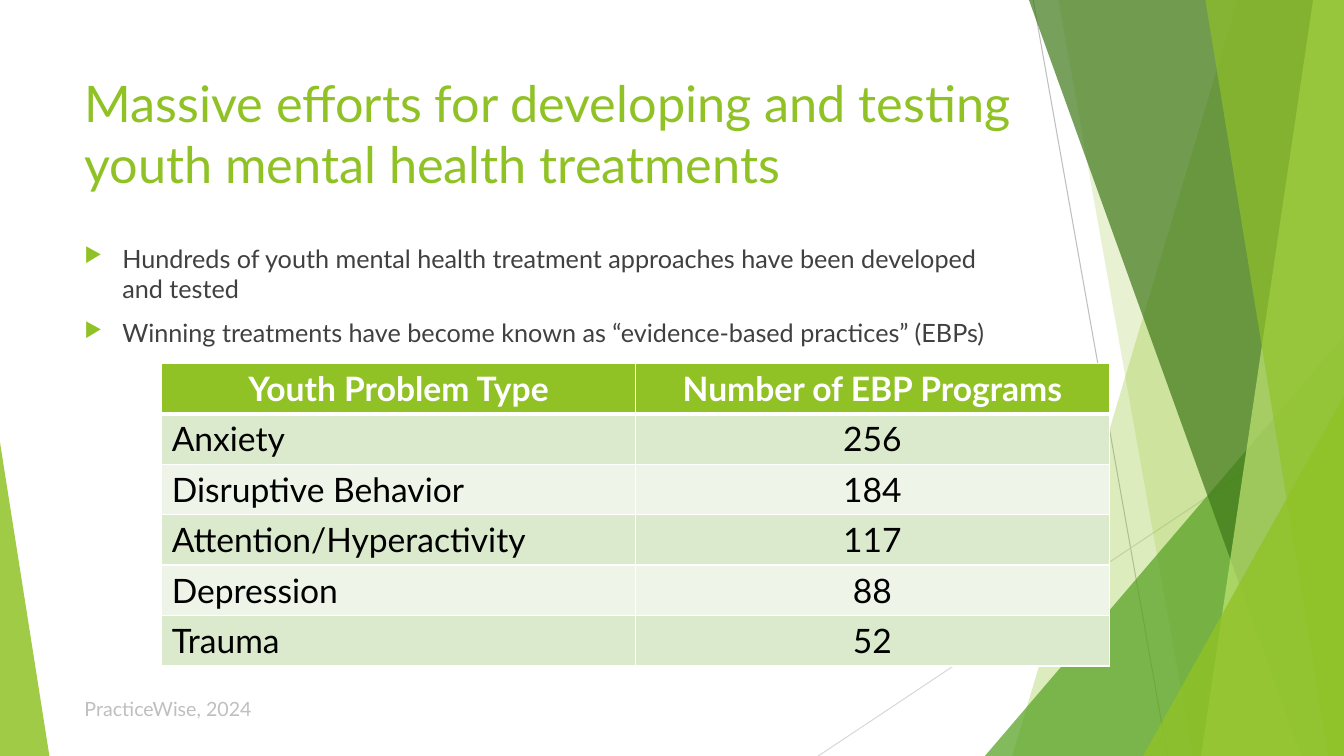
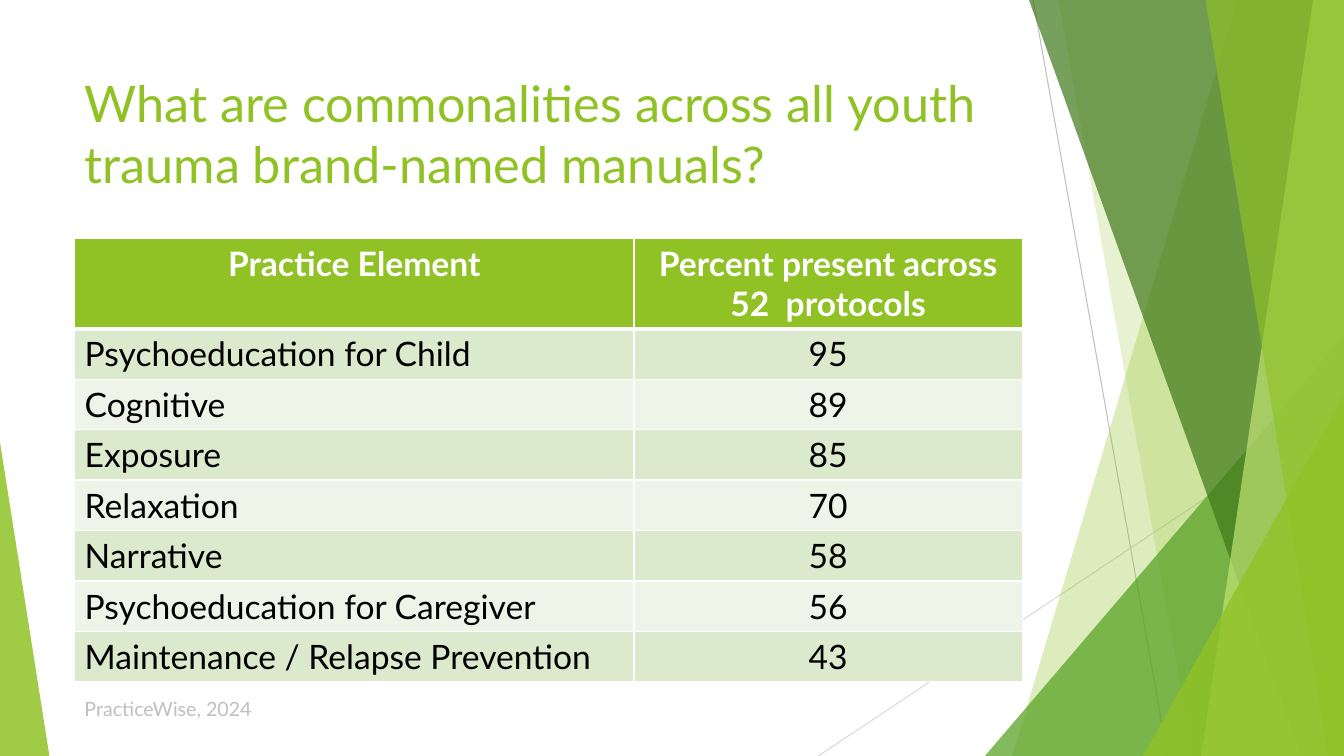
from dataclasses import dataclass

from lxml import etree
from pptx import Presentation
from pptx.dml.color import RGBColor
from pptx.enum import shapes, text
from pptx.oxml import ns
from pptx.util import Pt


@dataclass(frozen=True)
class Theme:
    font: str = "Lato"
    lime: str = "90C226"
    green: str = "54A021"
    forest: str = "3F7819"
    pale: str = "C0E474"
    white: str = "FFFFFF"
    ink: str = "000000"
    body: str = "404040"
    grey: str = "BFBFBF"
    light_grey: str = "D9D9D9"
    stripes: tuple = ("DBE9CD", "EEF4E8")
    title_size: int = 36
    table_size: int = 24
    body_size: int = 18
    source_size: int = 14


THEME = Theme()
WIDTH, HEIGHT = 960, 540
MARGIN, CONTENT_WIDTH = 53.3, 676.8
ROW_HEIGHT = 36
CENTER = text.PP_ALIGN.CENTER


def add_xml(parent, tag, **attributes):
    """Append a drawing element to a parent and return it."""
    return etree.SubElement(parent, ns.qn(tag), attributes)


def write(paragraph, wording, size, color, bold=False, align=None):
    """Put formatted wording into a paragraph."""
    paragraph.text = wording
    paragraph.alignment = align
    font = paragraph.font
    font.name, font.size, font.bold = THEME.font, Pt(size), bold
    font.color.rgb = RGBColor.from_string(color)


class Deck:
    """Hold the presentation, its style and the current slide."""

    def __init__(self):
        self.show = Presentation()
        self.show.slide_width, self.show.slide_height = Pt(WIDTH), Pt(HEIGHT)
        self.slide = None

    def start(self, title, source):
        """Open a slide with its backdrop, title and source line."""
        self.slide = self.show.slides.add_slide(self.show.slide_layouts[6])
        self.backdrop()
        heading = self.frame(48.2, CONTENT_WIDTH, 103.7)
        write(heading.paragraphs[0], title, THEME.title_size, THEME.lime)
        credit = self.frame(494, 806.4, 24.5)
        write(credit.paragraphs[0], source, THEME.source_size, THEME.grey)

    def frame(self, top, width, height):
        """Add a wrapping text box at the left margin."""
        box = self.slide.shapes.add_textbox(Pt(MARGIN), Pt(top), Pt(width), Pt(height))
        box.text_frame.word_wrap = True
        return box.text_frame

    def paint(self, facet, color, opacity):
        """Give a facet a translucent fill without outline or shadow."""
        facet.shadow.inherit = False
        facet.line.fill.background()
        facet.fill.solid()
        facet.fill.fore_color.rgb = RGBColor.from_string(color)
        tint = facet.element.spPr.find(".//" + ns.qn("a:srgbClr"))
        add_xml(tint, "a:alpha", val=str(opacity * 1000))

    def band(self, top_x, bottom_x, color, opacity):
        """Fill from a slanted left side to the right slide edge."""
        outline = self.slide.shapes.build_freeform(Pt(top_x), 0)
        corners = [(WIDTH, 0), (WIDTH, HEIGHT), (bottom_x, HEIGHT)]
        outline.add_line_segments([(Pt(x), Pt(y)) for x, y in corners])
        self.paint(outline.convert_to_shape(), color, opacity)

    def corner(self, left, top, width, apex, color, opacity):
        """Add a triangle standing on the bottom slide edge."""
        wedge = self.slide.shapes.add_shape(
            shapes.MSO_SHAPE.ISOSCELES_TRIANGLE,
            Pt(left), Pt(top), Pt(width), Pt(HEIGHT - top))
        wedge.adjustments[0] = apex
        self.paint(wedge, color, opacity)

    def hairline(self, start_x, start_y, end_x, end_y, color):
        """Draw a thin straight line."""
        ray = self.slide.shapes.add_connector(
            shapes.MSO_CONNECTOR.STRAIGHT,
            Pt(start_x), Pt(start_y), Pt(end_x), Pt(end_y))
        ray.line.width = Pt(0.75)
        ray.line.color.rgb = RGBColor.from_string(color)
        add_xml(ray.element.spPr, "a:effectLst")

    def backdrop(self):
        """Draw the layered green facets."""
        self.hairline(738, 0, 834, HEIGHT, THEME.grey)
        self.hairline(WIDTH, 290, 584.5, HEIGHT, THEME.light_grey)
        self.band(884, 723, THEME.lime, 30)
        self.band(756, 852, THEME.lime, 20)
        self.corner(703.5, 240, 256.5, 1, THEME.green, 72)
        self.band(735, 929.5, THEME.forest, 70)
        self.band(938, 858, THEME.pale, 70)
        self.band(861, 949, THEME.lime, 65)
        self.corner(816.5, 283, 143.5, 1, THEME.lime, 80)
        self.corner(0, 316, 35.3, 0, THEME.lime, 85)

    def bullets(self, top, height, points):
        """Add a list with triangular bullets."""
        area = self.frame(top, CONTENT_WIDTH, height)
        for index, point in enumerate(points):
            item = area.add_paragraph() if index else area.paragraphs[0]
            item.space_before = Pt(10 if index else 0)
            layout = item._p.get_or_add_pPr()
            layout.set("marL", str(Pt(27)))
            layout.set("indent", str(-Pt(27)))
            add_xml(add_xml(layout, "a:buClr"), "a:srgbClr", val=THEME.lime)
            add_xml(layout, "a:buSzPct", val="80000")
            add_xml(layout, "a:buChar", char="▶")
            write(item, point, THEME.body_size, THEME.body)

    def borders(self, cell, top, bottom):
        """Rule a cell in white with given top and bottom widths."""
        properties = cell._tc.get_or_add_tcPr()
        for side, width in zip("LRTB", (1, 1, top, bottom)):
            rule = add_xml(properties, f"a:ln{side}", w=str(Pt(width)))
            add_xml(add_xml(rule, "a:solidFill"), "a:srgbClr", val=THEME.white)

    def table(self, left, top, widths, header_height, rows):
        """Add a striped table whose first row is the header."""
        heights = [header_height] + [ROW_HEIGHT] * (len(rows) - 1)
        grid = self.slide.shapes.add_table(
            len(rows), len(widths), Pt(left), Pt(top),
            Pt(sum(widths)), Pt(sum(heights))).table
        for column, width in zip(grid.columns, widths):
            column.width = Pt(width)
        for r, (row, height) in enumerate(zip(rows, heights)):
            grid.rows[r].height = Pt(height)
            header = r == 0
            fill = THEME.lime if header else THEME.stripes[(r - 1) % 2]
            for c, wording in enumerate(row):
                cell = grid.cell(r, c)
                self.borders(cell, 3 if r == 1 else 1, 3 if header else 1)
                cell.fill.solid()
                cell.fill.fore_color.rgb = RGBColor.from_string(fill)
                write(cell.text_frame.paragraphs[0], wording, THEME.table_size,
                      THEME.white if header else THEME.ink, bold=header,
                      align=CENTER if header or c else None)


def main():
    """Build both slides and save them."""
    deck = Deck()
    source = "PracticeWise, 2024"

    deck.start("Massive efforts for developing and testing youth mental health treatments", source)
    deck.bullets(170, 305, [
        "Hundreds of youth mental health treatment approaches have been developed and tested",
        "Winning treatments have become known as “evidence-based practices” (EBPs)",
    ])
    deck.table(115.5, 259.5, (338.4, 338.4), ROW_HEIGHT, [
        ("Youth Problem Type", "Number of EBP Programs"),
        ("Anxiety", "256"),
        ("Disruptive Behavior", "184"),
        ("Attention/Hyperactivity", "117"),
        ("Depression", "88"),
        ("Trauma", "52"),
    ])

    deck.start("What are commonalities across all youth trauma brand-named manuals?", source)
    deck.table(MARGIN, 170, (399.6, 277.2), 64.8, [
        ("Practice Element", "Percent present across 52  protocols"),
        ("Psychoeducation for Child", "95"),
        ("Cognitive", "89"),
        ("Exposure", "85"),
        ("Relaxation", "70"),
        ("Narrative", "58"),
        ("Psychoeducation for Caregiver", "56"),
        ("Maintenance / Relapse Prevention", "43"),
    ])

    deck.show.save("out.pptx")


if __name__ == "__main__":
    main()
